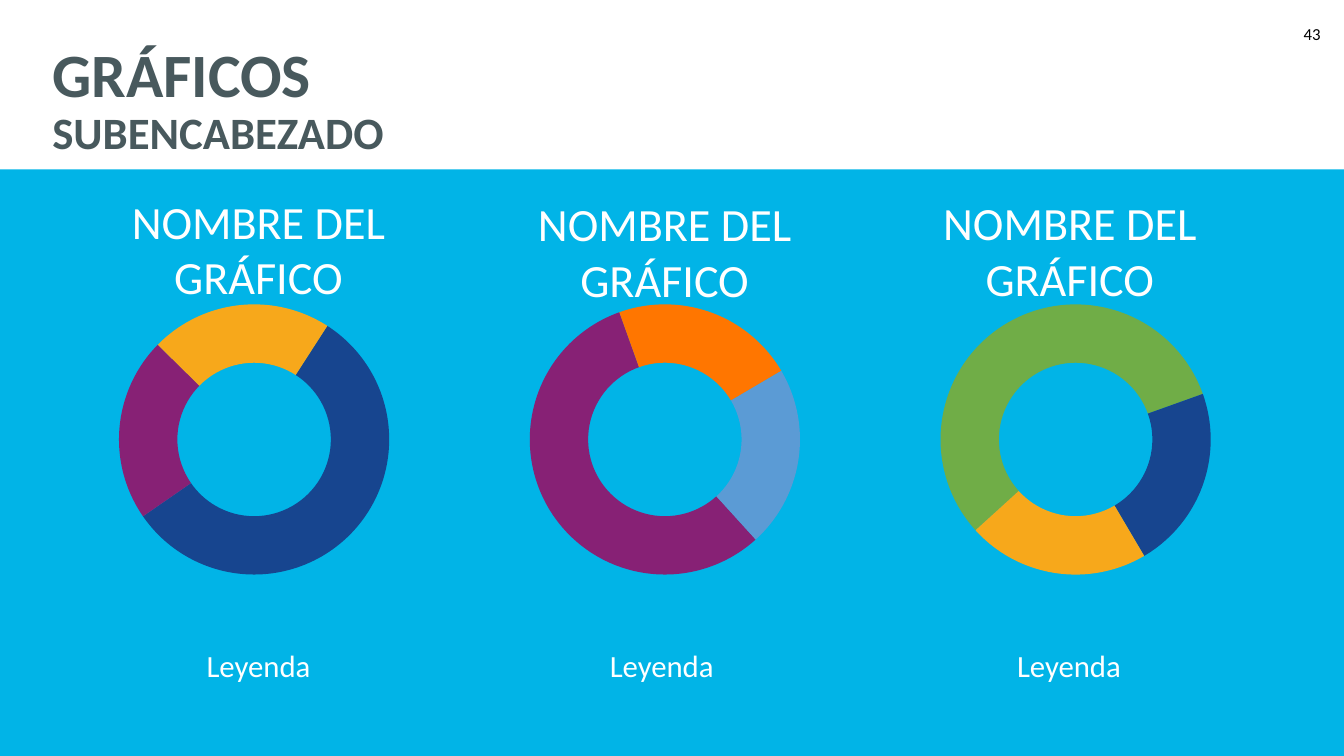
from dataclasses import dataclass

from pptx import Presentation
from pptx.dml.color import RGBColor
from pptx.enum.shapes import MSO_SHAPE
from pptx.enum.text import MSO_ANCHOR, MSO_AUTO_SIZE, PP_ALIGN
from pptx.slide import Slide
from pptx.text.text import TextFrame
from pptx.util import Pt

RECTANGLE, BLOCK_ARC = MSO_SHAPE.RECTANGLE, MSO_SHAPE.BLOCK_ARC
TOP, MIDDLE, BOTTOM = MSO_ANCHOR.TOP, MSO_ANCHOR.MIDDLE, MSO_ANCHOR.BOTTOM
LEFT, CENTER, RIGHT = PP_ALIGN.LEFT, PP_ALIGN.CENTER, PP_ALIGN.RIGHT
NO_FIT, GROW = MSO_AUTO_SIZE.NONE, MSO_AUTO_SIZE.SHAPE_TO_FIT_TEXT

FONT = "Calibri"
COLORS = {
    "white": "FFFFFF", "black": "000000", "slate": "48595D", "cyan": "01B4E7",
    "navy": "17458F", "purple": "872175", "gold": "F7A81B",
    "orange": "FF7600", "blue": "5B9BD5", "green": "70AD47",
}

WIDTH, HEIGHT = 960, 540
BAND_TOP = 121
RING_LEFT, RING_TOP, RING_SIZE, RING_STEP = 85, 217.4, 193, 293.4
RING_THICKNESS = 0.216
ARC_BOUNDS = (302.8, 145.3, 224.5, 302.8)
ADJ_PER_DEGREE = 0.6
LEGEND_TOP, LEGEND_WIDTH = 410.4, 265.7


@dataclass(frozen=True)
class Box:
    left: float
    top: float
    width: float
    height: float

    def lengths(self) -> tuple[Pt, Pt, Pt, Pt]:
        return Pt(self.left), Pt(self.top), Pt(self.width), Pt(self.height)


@dataclass(frozen=True)
class Ring:
    rotation: float
    colors: tuple[str, str, str]
    name_box: Box
    legend_left: float


RINGS = (
    Ring(0, ("navy", "purple", "gold"), Box(51.8, 134.6, 265.7, 47.5), 51.8),
    Ring(105, ("purple", "orange", "blue"), Box(347, 136.1, 255.6, 47.5), 339.8),
    Ring(195, ("green", "navy", "gold"), Box(631.4, 135.4, 265.7, 47.5), 630.7),
)


def rgb(color: str) -> RGBColor:
    return RGBColor.from_string(COLORS[color])


def add_filled(slide: Slide, kind: MSO_SHAPE, box: Box, color: str):
    sp = slide.shapes.add_shape(kind, *box.lengths())
    sp.shadow.inherit = False
    sp.fill.solid()
    sp.fill.fore_color.rgb = rgb(color)
    sp.line.fill.background()
    return sp


def format_text(tf: TextFrame, sizes: tuple[float, ...], color: str,
                align: PP_ALIGN, bold: bool = False) -> None:
    p = tf.paragraphs[0]
    p.alignment = align
    for r, size in zip(p.runs, sizes):
        r.font.name = FONT
        r.font.size = Pt(size)
        r.font.bold = bold
        r.font.color.rgb = rgb(color)


def add_text(slide: Slide, box: Box, text: str, size: float, color: str = "white",
             align: PP_ALIGN = CENTER, anchor: MSO_ANCHOR = MIDDLE,
             fit: MSO_AUTO_SIZE = NO_FIT) -> None:
    tf = slide.shapes.add_textbox(*box.lengths()).text_frame
    tf.word_wrap = True
    tf.auto_size = fit
    tf.vertical_anchor = anchor
    tf.text = text
    format_text(tf, (size,), color, align)


def set_title(slide: Slide) -> None:
    title = slide.shapes.title
    title.left, title.top, title.width, title.height = Box(30.2, 0, 905.8, BAND_TOP).lengths()
    tf = title.text_frame
    tf.auto_size = NO_FIT
    tf.vertical_anchor = BOTTOM
    tf.margin_top, tf.margin_bottom = Pt(0), Pt(7.2)
    tf.text = "GRÁFICOS\vSUBENCABEZADO"
    tf.paragraphs[0].line_spacing = 0.9
    format_text(tf, (44, 32), "slate", LEFT, bold=True)


def add_ring(slide: Slide, index: int, ring: Ring) -> None:
    box = Box(RING_LEFT + index * RING_STEP, RING_TOP, RING_SIZE, RING_SIZE)
    for start, end, color in zip(ARC_BOUNDS, ARC_BOUNDS[1:], ring.colors):
        arc = add_filled(slide, BLOCK_ARC, box, color)
        arc.rotation = ring.rotation
        arc.adjustments[0] = start * ADJ_PER_DEGREE
        arc.adjustments[1] = end * ADJ_PER_DEGREE
        arc.adjustments[2] = RING_THICKNESS


def main() -> None:
    prs = Presentation()
    prs.slide_width, prs.slide_height = Pt(WIDTH), Pt(HEIGHT)
    slide = prs.slides.add_slide(prs.slide_layouts[5])
    set_title(slide)
    add_filled(slide, RECTANGLE, Box(0, BAND_TOP, WIDTH, HEIGHT - BAND_TOP), "cyan")
    add_text(slide, Box(917.3, 9.4, 33.1, 28.8), "43", 12, "black", RIGHT)
    for index, ring in enumerate(RINGS):
        add_ring(slide, index, ring)
        add_text(slide, ring.name_box, "NOMBRE DEL GRÁFICO", 33, anchor=TOP, fit=GROW)
        legend = Box(ring.legend_left, LEGEND_TOP, LEGEND_WIDTH, HEIGHT - LEGEND_TOP)
        add_text(slide, legend, "Leyenda", 22)
    prs.save("out.pptx")


if __name__ == "__main__":
    main()
